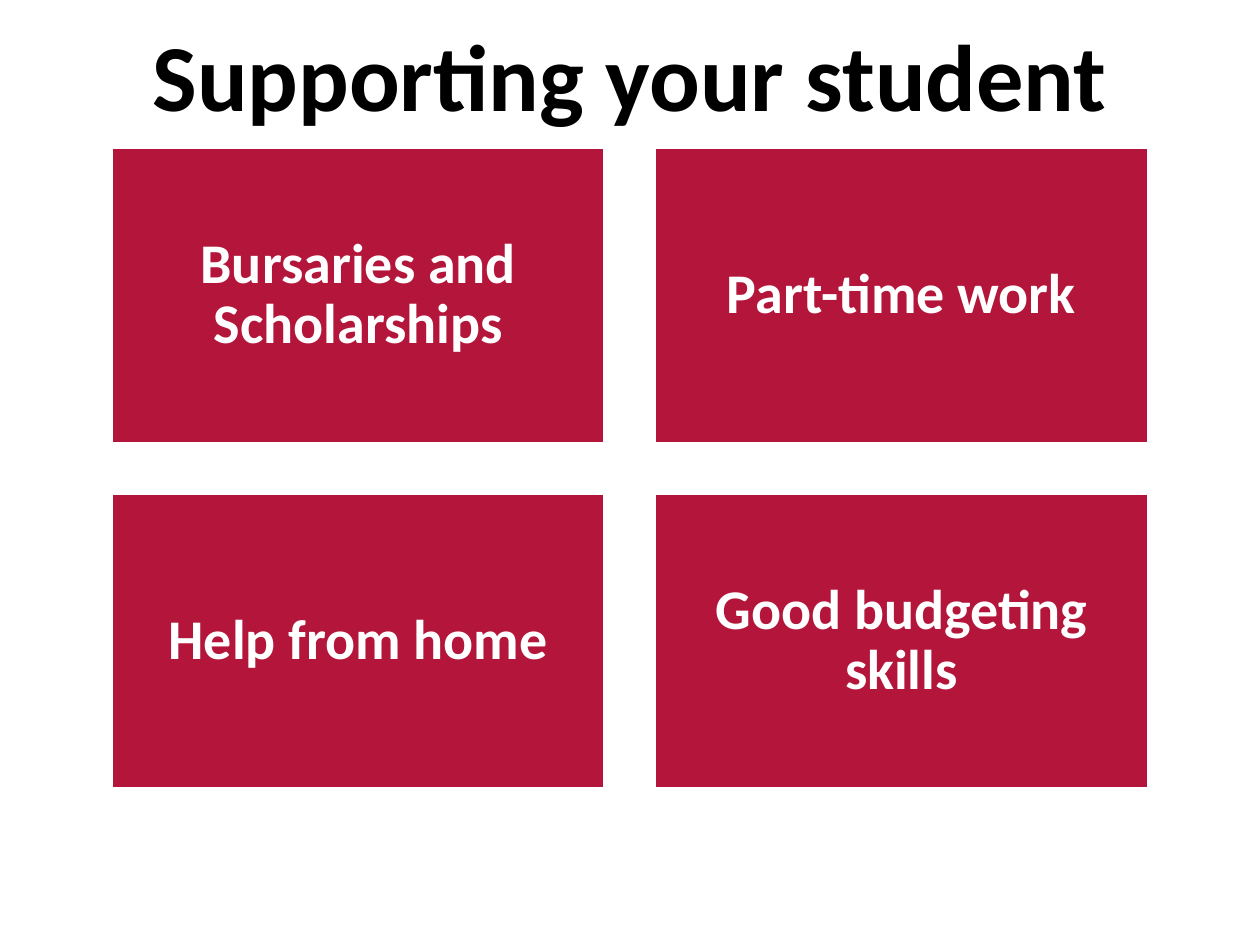
from pptx import Presentation
from pptx.dml.color import RGBColor
from pptx.enum.shapes import MSO_SHAPE
from pptx.enum.text import MSO_ANCHOR, PP_ALIGN
from pptx.util import Pt

BLACK = RGBColor(0x00, 0x00, 0x00)
WHITE = RGBColor(0xFF, 0xFF, 0xFF)
CRIMSON = RGBColor(0xB4, 0x15, 0x3A)

SLIDE_WIDTH, SLIDE_HEIGHT = 720, 540
TILE_WIDTH, TILE_HEIGHT = 282.2, 169.3
GAP = 28.2
COLUMNS = 2
GRID_LEFT = (SLIDE_WIDTH - COLUMNS * TILE_WIDTH - GAP) / 2
GRID_TOP = 84.2

SUPPORT = [
    "Bursaries and Scholarships",
    "Part-time work",
    "Help from home",
    "Good budgeting skills",
]


class SlideBuilder:
    font_name = "Calibri"
    tile_inset = 9.6

    def __init__(self, slide):
        self.slide = slide

    def add_text(self, frame, text, size, color):
        """Put one bold, centred paragraph in the frame."""
        frame.word_wrap = True
        frame.vertical_anchor = MSO_ANCHOR.MIDDLE
        para = frame.paragraphs[0]
        para.alignment = PP_ALIGN.CENTER
        span = para.add_run()
        span.text = text
        span.font.name = self.font_name
        span.font.size = Pt(size)
        span.font.bold = True
        span.font.color.rgb = color
        return para

    def title(self, text, left, top, width, height):
        box = self.slide.shapes.add_textbox(Pt(left), Pt(top), Pt(width), Pt(height))
        self.add_text(box.text_frame, text, 54, BLACK)

    def tile(self, text, left, top):
        box = self.slide.shapes.add_shape(
            MSO_SHAPE.RECTANGLE, Pt(left), Pt(top), Pt(TILE_WIDTH), Pt(TILE_HEIGHT)
        )
        box.shadow.inherit = False
        box.fill.solid()
        box.fill.fore_color.rgb = CRIMSON
        box.line.color.rgb = WHITE
        box.line.width = Pt(2)
        frame = box.text_frame
        frame.margin_left = frame.margin_right = Pt(self.tile_inset)
        frame.margin_top = frame.margin_bottom = Pt(self.tile_inset)
        para = self.add_text(frame, text, 32, WHITE)
        para.line_spacing = 0.9


def main():
    deck = Presentation()
    deck.slide_width, deck.slide_height = Pt(SLIDE_WIDTH), Pt(SLIDE_HEIGHT)
    page = SlideBuilder(deck.slides.add_slide(deck.slide_layouts[6]))

    page.title("Supporting your student", 54, 0, 612, GRID_TOP)
    for index, text in enumerate(SUPPORT):
        row, column = divmod(index, COLUMNS)
        page.tile(
            text,
            GRID_LEFT + column * (TILE_WIDTH + GAP),
            GRID_TOP + row * (TILE_HEIGHT + GAP),
        )

    deck.save("out.pptx")


if __name__ == "__main__":
    main()
